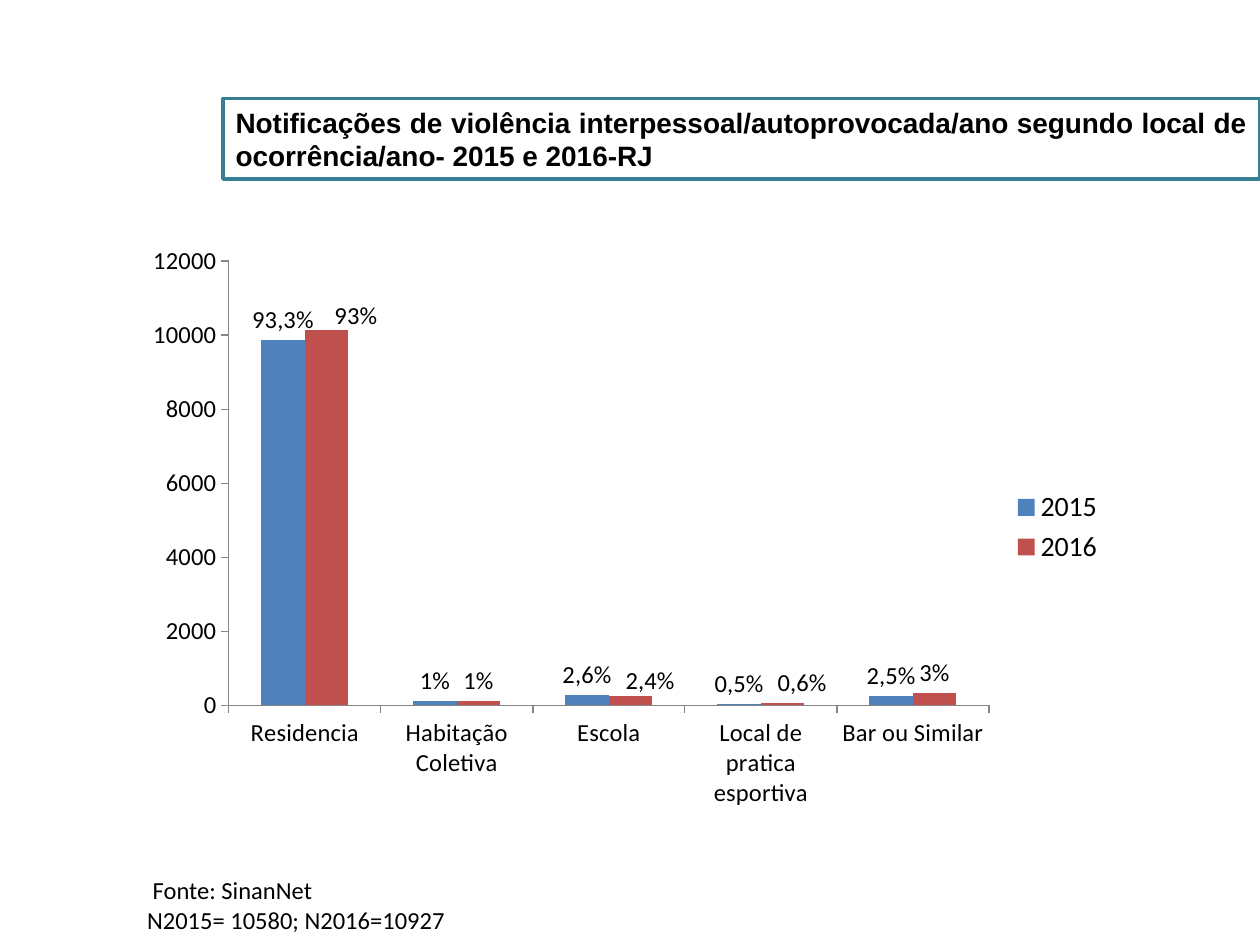
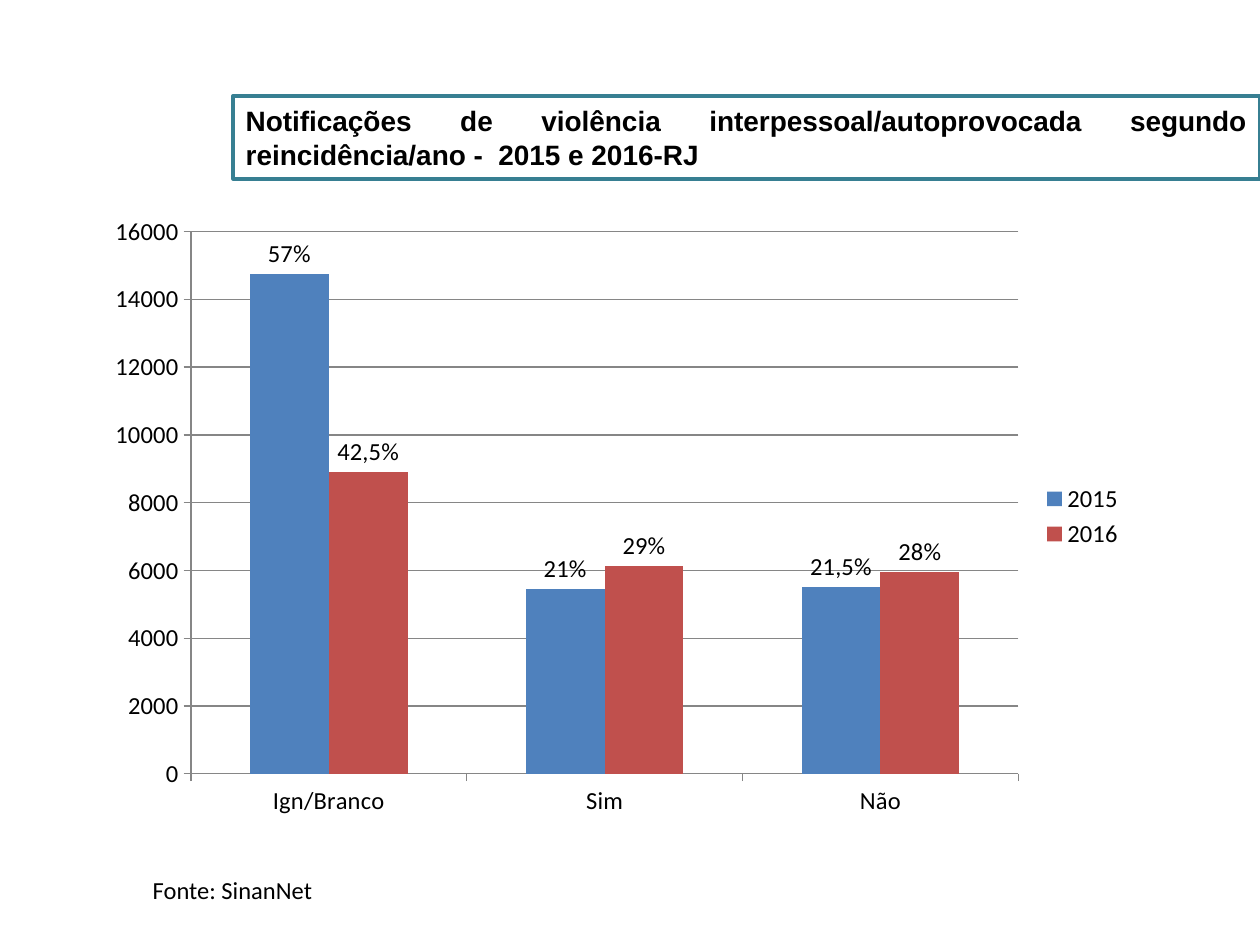
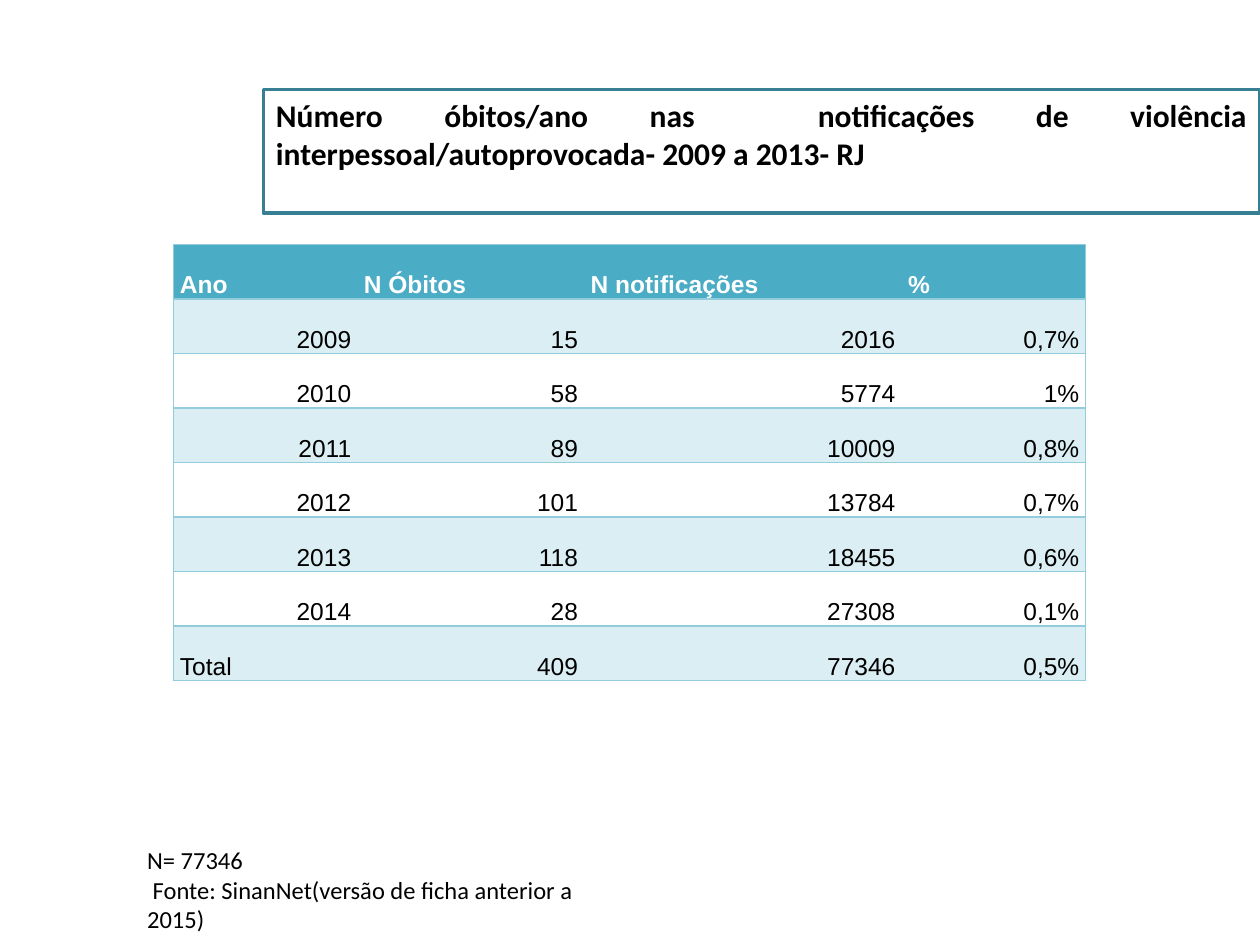
"""Build three slides on violence notifications in RJ: two charts and a table."""
from lxml import etree
from pptx import Presentation
from pptx.chart.data import CategoryChartData as Data
from pptx.dml.color import RGBColor as RGB
from pptx.enum.chart import XL_CHART_TYPE as Kind, XL_LABEL_POSITION as Spot
from pptx.enum.chart import XL_LEGEND_POSITION as Side, XL_TICK_MARK as Tick
from pptx.enum.text import MSO_ANCHOR as Anchor, MSO_AUTO_SIZE as Fit, PP_ALIGN as Align
from pptx.oxml import parse_xml
from pptx.oxml.ns import nsdecls, qn
from pptx.util import Pt

HUE = {"text": "000000", "white": "FFFFFF", "frame": "377F92", "axis": "868686",
       "2015": "4F81BD", "2016": "C0504D", "head": "4BACC6", "band": "DBEEF3",
       "rule": "93CDDD"}


def tint(name):
    return RGB.from_string(HUE[name])


def put(frame, text, font="Calibri", size=14, bold=False, hue="text",
        align=Align.LEFT, anchor=Anchor.TOP, space=None):
    frame.vertical_anchor = anchor
    frame.text = text
    for para in frame.paragraphs:
        if para.text.startswith("Fonte"):
            props = para._p.get_or_add_pPr()
            props.set("marL", "0")
            props.set("indent", str(Pt(3.2)))
        para.alignment = align
        para.line_spacing = space
        for run in para.runs:
            run.font.name = font
            run.font.size = Pt(size)
            run.font.bold = bold
            run.font.color.rgb = tint(hue)


deck = Presentation()
deck.slide_width, deck.slide_height = Pt(720), Pt(540)

pages = [
    {"title": "Notificações de violência interpessoal/autoprovocada/ano segundo local de "
              "ocorrência/ano- 2015 e 2016-RJ",
     "box": (127.4, 56.2, 46.1), "look": {"font": "Arial", "size": 16, "anchor": Anchor.MIDDLE},
     "note": "Fonte: SinanNet\nN2015= 10580; N2016=10927", "top": 496.6},
    {"title": "Notificações de violência interpessoal/autoprovocada segundo "
              "reincidência/ano -  2015 e 2016-RJ",
     "box": (133.2, 54.7, 47.5), "look": {"font": "Arial", "size": 16, "anchor": Anchor.MIDDLE},
     "note": "Fonte: SinanNet", "top": 496.6},
    {"title": "Número óbitos/ano nas  notificações de violência "
              "interpessoal/autoprovocada- 2009 a 2013- RJ",
     "box": (150.5, 51.1, 70.6), "look": {"size": 18},
     "note": "N= 77346\nFonte: SinanNet(versão de ficha anterior a 2015)", "top": 479.5},
]
slides = []
for page in pages:
    slide = deck.slides.add_slide(deck.slide_layouts[5])
    slides.append(slide)
    left, top, high = page["box"]
    title = slide.shapes.title
    title.left, title.top = Pt(left), Pt(top)
    title.width, title.height = Pt(720 - left), Pt(high)
    title.line.color.rgb = tint("frame")
    title.line.width = Pt(2)
    title.text_frame.auto_size = Fit.NONE
    put(title.text_frame, page["title"], bold=True, align=Align.JUSTIFY, **page["look"])
    note = slide.shapes.add_textbox(Pt(77), Pt(page["top"]), Pt(283), Pt(540 - page["top"]))
    note.text_frame.word_wrap = True
    put(note.text_frame, page["note"])

plots = [
    {"at": (76.3, 133.9, 561.6, 334.8), "grid": False, "key": 16, "max": 12000,
     "cats": ["Residencia", "Habitação Coletiva", "Escola", "Local de pratica esportiva",
              "Bar ou Similar"],
     "rows": {"2015": ([9872, 108, 285, 49, 266], ["93,3%", "1%", "2,6%", "0,5%", "2,5%"]),
              "2016": ([10131, 118, 265, 73, 340], ["93%", "1%", "2,4%", "0,6%", "3%"])},
     "move": {"93%": (0.03, 0.01), "2,4%": (0.02, 0.01), "0,6%": (0.02, 0)}},
    {"at": (54, 116.6, 595.4, 357.1), "grid": True, "key": 14, "max": 16000,
     "cats": ["Ign/Branco", "Sim", "Não"],
     "rows": {"2015": ([14759, 5455, 5523], ["57%", "21%", "21,5%"]),
              "2016": ([8919, 6123, 5940], ["42,5%", "29%", "28%"])},
     "move": {}},
]
for slide, plan in zip(slides, plots):
    data = Data()
    data.categories = plan["cats"]
    for name, (vals, marks) in plan["rows"].items():
        data.add_series(name, vals)
    area = [Pt(n) for n in plan["at"]]
    chart = slide.shapes.add_chart(Kind.COLUMN_CLUSTERED, *area, data).chart
    chart.has_title = False
    chart.font.name, chart.font.size = "Calibri", Pt(10)
    chart.font.color.rgb = tint("text")
    chart.has_legend = True
    chart.legend.position = Side.RIGHT
    chart.legend.include_in_layout = False
    chart.legend.font.size = Pt(plan["key"])
    for axis in (chart.category_axis, chart.value_axis):
        axis.major_tick_mark, axis.minor_tick_mark = Tick.OUTSIDE, Tick.NONE
        axis.tick_labels.font.size = Pt(14)
        axis.format.line.color.rgb = tint("axis")
    axis.minimum_scale, axis.maximum_scale, axis.major_unit = 0, plan["max"], 2000
    axis.has_major_gridlines = plan["grid"]
    if plan["grid"]:
        axis.major_gridlines.format.line.color.rgb = tint("axis")
    plot = chart.plots[0]
    plot.gap_width, plot.overlap, plot.vary_by_categories = 150, 0, False
    for row in plot.series:
        row.format.fill.solid()
        row.format.fill.fore_color.rgb = tint(row.name)
        row.data_labels.show_value = True
        row.data_labels.position = Spot.OUTSIDE_END
        row.data_labels.font.size = Pt(14)
        for i, mark in enumerate(plan["rows"][row.name][1]):
            label = row.points[i].data_label
            put(label.text_frame, mark, align=None)
            label.position = Spot.OUTSIDE_END
            if mark in plan["move"]:
                x, y = plan["move"][mark]
                item = row.data_labels._element.findall(qn("c:dLbl"))[i]
                item.insert(1, parse_xml(
                    f'<c:layout {nsdecls("c")}><c:manualLayout><c:x val="{x}"/>'
                    f'<c:y val="{y}"/></c:manualLayout></c:layout>'))

deaths = [
    ["Ano", "N Óbitos", "N notificações", "%"],
    ["2009", "15", "2016", "0,7%"],
    ["2010", "58", "5774", "1%"],
    ["2011", "89", "10009", "0,8%"],
    ["2012", "101", "13784", "0,7%"],
    ["2013", "118", "18455", "0,6%"],
    ["2014", "28", "27308", "0,1%"],
    ["Total", "409", "77346", "0,5%"],
]
wide = [105.1, 129.6, 181.4, 105.1]
table = slides[2].shapes.add_table(8, 4, Pt(99.2), Pt(139.8), Pt(sum(wide)), Pt(249.1)).table
table.first_row = table.horz_banding = False
table._tbl.tblPr.find(qn("a:tableStyleId")).text = "{2D5ABB26-0587-4C30-8999-92F81FD0307C}"
for col, width in zip(table.columns, wide):
    col.width = Pt(width)
for r, line in enumerate(deaths):
    table.rows[r].height = Pt(31.14)
    for c, text in enumerate(line):
        cell = table.cell(r, c)
        cell.margin_left = cell.margin_right = Pt(3.6)
        cell.margin_top = cell.margin_bottom = 0
        cell.vertical_anchor = Anchor.BOTTOM
        put(cell.text_frame, text, font="Arial", bold=r == 0, space=1.15,
            hue="text" if r else "white", anchor=None,
            align=Align.RIGHT if r and text != "Total" else Align.LEFT)
        props = cell._tc.get_or_add_tcPr()
        edges = ["lnL"] * (c == 0) + ["lnR"] * (c == 3) + ["lnT", "lnB"]
        for edge in edges:
            rule = etree.SubElement(props, qn("a:" + edge), w=str(Pt(1)))
            fill = etree.SubElement(rule, qn("a:solidFill"))
            etree.SubElement(fill, qn("a:srgbClr"), val=HUE["rule"])
        cell.fill.solid()
        cell.fill.fore_color.rgb = tint("head" if r == 0 else "band" if r % 2 else "white")

deck.save("out.pptx")
